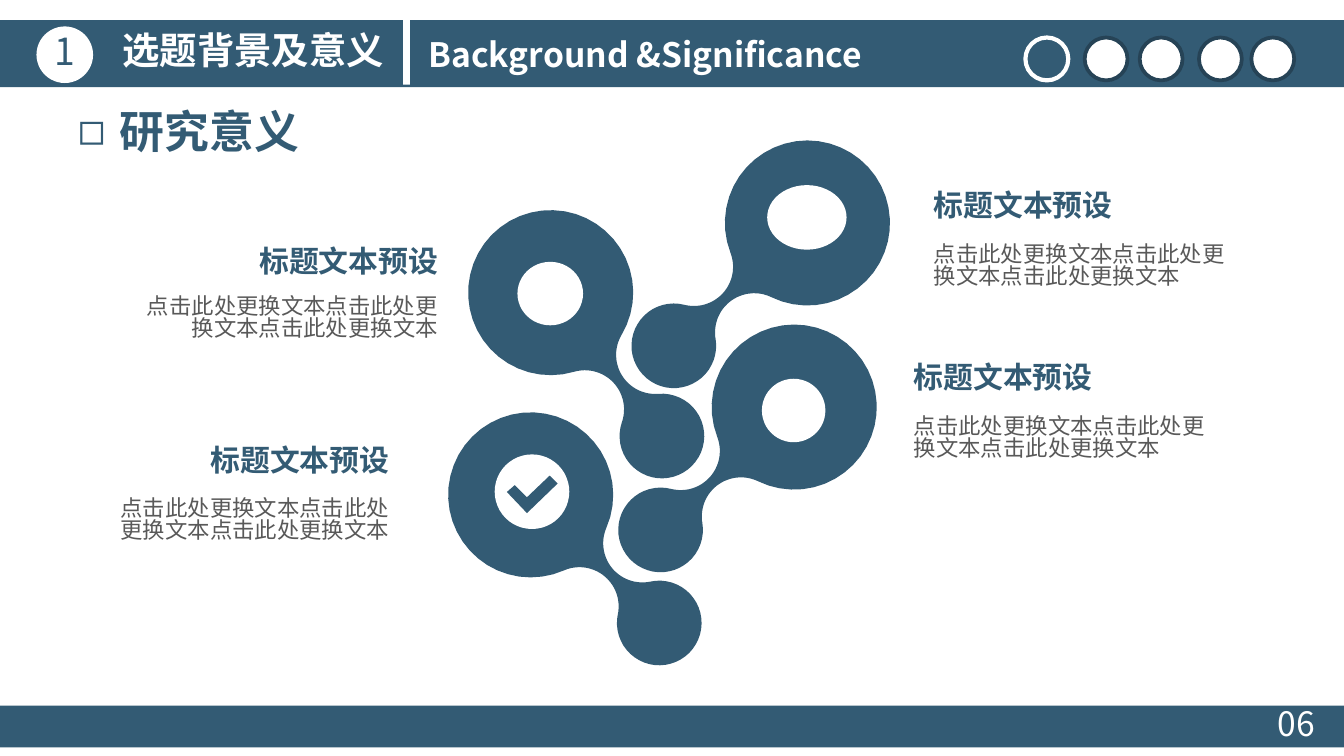
from math import atan2, cos, pi, sin, sqrt

from lxml import etree
from pptx import Presentation
from pptx.dml.color import RGBColor
from pptx.enum.shapes import MSO_SHAPE
from pptx.enum.text import MSO_ANCHOR, MSO_AUTO_SIZE, PP_ALIGN
from pptx.oxml.ns import qn
from pptx.util import Cm, Pt

RECTANGLE, OVAL = MSO_SHAPE.RECTANGLE, MSO_SHAPE.OVAL
TOP, MIDDLE = MSO_ANCHOR.TOP, MSO_ANCHOR.MIDDLE
LEFT, CENTER, RIGHT = PP_ALIGN.LEFT, PP_ALIGN.CENTER, PP_ALIGN.RIGHT
FIXED = MSO_AUTO_SIZE.NONE

BLUE = RGBColor(0x33, 0x5B, 0x74)
DARK_BLUE = RGBColor(0x26, 0x43, 0x56)
GREY = RGBColor(0x59, 0x59, 0x59)
WHITE = RGBColor(0xFF, 0xFF, 0xFF)
FONT = "Noto Sans CJK SC"
LINE_SPACING = 0.83

prs = Presentation()
prs.slide_width, prs.slide_height = Cm(25.4), Cm(14.29)
slide = prs.slides.add_slide(prs.slide_layouts[1])
shapes = slide.shapes


def paint(shape, fill=None, line=None, width=0):
    """Set fill and outline (None means none) and drop the shadow."""
    shape.shadow.inherit = False
    if fill is None:
        shape.fill.background()
    else:
        shape.fill.solid()
        shape.fill.fore_color.rgb = fill
    if line is None:
        shape.line.fill.background()
    else:
        shape.line.color.rgb = line
        shape.line.width = Pt(width)


def write(shape, text, size, color, bold=False, align=LEFT, **frame_format):
    frame = shape.text_frame
    frame_values = {"auto_size": FIXED, "word_wrap": True,
                    "vertical_anchor": TOP, **frame_format}
    for key, value in frame_values.items():
        setattr(frame, key, value)
    paragraph = frame.paragraphs[0]
    paragraph_values = {"alignment": align, "line_spacing": LINE_SPACING,
                        "space_before": Pt(0)}
    for key, value in paragraph_values.items():
        setattr(paragraph, key, value)
    run = paragraph.add_run()
    run.text = text
    for key, value in {"name": FONT, "size": Pt(size), "bold": bold}.items():
        setattr(run.font, key, value)
    run.font.color.rgb = color
    east_asian = etree.SubElement(run.font._element, qn("a:ea"))
    east_asian.set("typeface", FONT)


# Header and footer bars
for left, top, width, height, color in (
    (0, 0.38, 25.4, 1.27, BLUE),
    (7.62, 0.38, 0.13, 1.22, WHITE),
    (0, 13.34, 25.4, 0.79, BLUE),
):
    bar = shapes.add_shape(RECTANGLE, Cm(left), Cm(top), Cm(width), Cm(height))
    paint(bar, color)

# Progress dots: the current section is hollow
for left, fill, line, width in (
    (19.38, None, WHITE, 2.25),
    (20.5, WHITE, DARK_BLUE, 2),
    (21.54, WHITE, DARK_BLUE, 2),
    (22.66, WHITE, DARK_BLUE, 2),
    (23.65, WHITE, DARK_BLUE, 2),
):
    dot = shapes.add_shape(OVAL, Cm(left), Cm(0.71), Cm(0.81), Cm(0.81))
    paint(dot, fill, line, width)

section_number = shapes.add_shape(OVAL, Cm(0.69), Cm(0.5), Cm(1.07), Cm(1.07))
paint(section_number, WHITE)
write(section_number, "1", 20, BLUE, align=CENTER, vertical_anchor=MIDDLE,
      word_wrap=False, margin_left=0, margin_right=0, margin_top=0, margin_bottom=0)

# Title and topic placeholders, brought in front of the bars
title, topic = shapes.title, slide.placeholders[1]
for placeholder, box in (
    (title, (2.06, 0.53, 5.51, 1.12)),
    (topic, (1.22, 2.01, 5.94, 1.27)),
):
    placeholder.left, placeholder.top, placeholder.width, placeholder.height = map(Cm, box)
    shapes.element.append(placeholder.element)
write(title, "选题背景及意义", 20, WHITE, bold=True, word_wrap=False)
write(topic, "研究意义", 24, BLUE, bold=True)
topic_format = topic.text_frame.paragraphs[0]._p.get_or_add_pPr()
topic_format.set("marL", str(Cm(0.79)))
topic_format.set("indent", str(-Cm(0.79)))
etree.SubElement(topic_format, qn("a:buChar")).set("char", "◻")

english_title = shapes.add_textbox(Cm(7.85), Cm(0.64), Cm(9.04), Cm(1.02))
write(english_title, "Background &Significance", 18, WHITE, bold=True, word_wrap=False)
page_number = shapes.add_textbox(Cm(23.9), Cm(13.29), Cm(1.5), Cm(1.02))
write(page_number, "06", 18, WHITE)

# Four points, each a heading over a description
for left, width, heading_top, description_top, align in (
    (2.54, 5.94, 4.71, 5.42, RIGHT),
    (17.45, 6.02, 3.65, 4.43, LEFT),
    (1.67, 5.89, 8.47, 9.23, RIGHT),
    (17.07, 6.05, 6.9, 7.69, LEFT),
):
    margins = {"margin_left": Cm(0.2), "margin_right": Cm(0.2),
               "margin_top": 0, "margin_bottom": 0}
    heading = shapes.add_textbox(Cm(left), Cm(heading_top), Cm(width), Cm(0.51))
    write(heading, "标题文本预设", 16, BLUE, bold=True, align=align, **margins)
    description = shapes.add_textbox(Cm(left), Cm(description_top), Cm(width), Cm(1.22))
    write(description, "点击此处更换文本" * 3, 12, GREY, align=align,
          vertical_anchor=MIDDLE, **margins)

# Leaf outline: a big and a small circle joined by two tangent hollow arcs
BIG, SMALL, HOLLOW, DISTANCE = 1.56, 0.8, 0.74, 3.43
hollow_x = (DISTANCE**2 + (BIG + HOLLOW)**2 - (SMALL + HOLLOW)**2) / (2 * DISTANCE)
hollow_y = sqrt((BIG + HOLLOW)**2 - hollow_x**2)
big_angle = atan2(hollow_y, hollow_x)
small_angle = atan2(hollow_y, DISTANCE - hollow_x)
STEPS = 40
leaf_points = []
for x, y, radius, start, end in (
    (0, 0, BIG, big_angle, 2 * pi - big_angle),
    (hollow_x, -hollow_y, HOLLOW, pi - big_angle, small_angle),
    (DISTANCE, 0, SMALL, pi + small_angle, 3 * pi - small_angle),
    (hollow_x, hollow_y, HOLLOW, -small_angle, big_angle - pi),
):
    for step in range(STEPS + 1):
        angle = start + (end - start) * step / STEPS
        leaf_points.append((Cm(x + radius * cos(angle)), Cm(y + radius * sin(angle))))

# Leaves with their white emblems
for left, top, rotation, emblem_box in (
    (11.13, 7.04, 137.4, (14.4, 7.16, 1.2, 1.2)),
    (11.38, 3.56, 137.4, (14.5, 3.5, 1.5, 1.22)),
    (8.33, 5.03, 52.2, (9.78, 4.95, 1.24, 1.2)),
    (8.08, 8.74, 44.9, (9.35, 8.59, 1.41, 1.41)),
):
    outline = shapes.build_freeform(*leaf_points[0])
    outline.add_line_segments(leaf_points[1:])
    leaf = outline.convert_to_shape()
    leaf.left, leaf.top, leaf.rotation = Cm(left), Cm(top), rotation
    paint(leaf, BLUE)
    paint(shapes.add_shape(OVAL, *map(Cm, emblem_box)), WHITE)

# Check mark on the last emblem
check_points = [(Cm(x), Cm(y)) for x, y in (
    (9.58, 9.3), (9.73, 9.17), (9.96, 9.4), (10.39, 8.99), (10.54, 9.14), (9.96, 9.7))]
check_outline = shapes.build_freeform(*check_points[0])
check_outline.add_line_segments(check_points[1:])
paint(check_outline.convert_to_shape(), BLUE)

prs.save("out.pptx")
